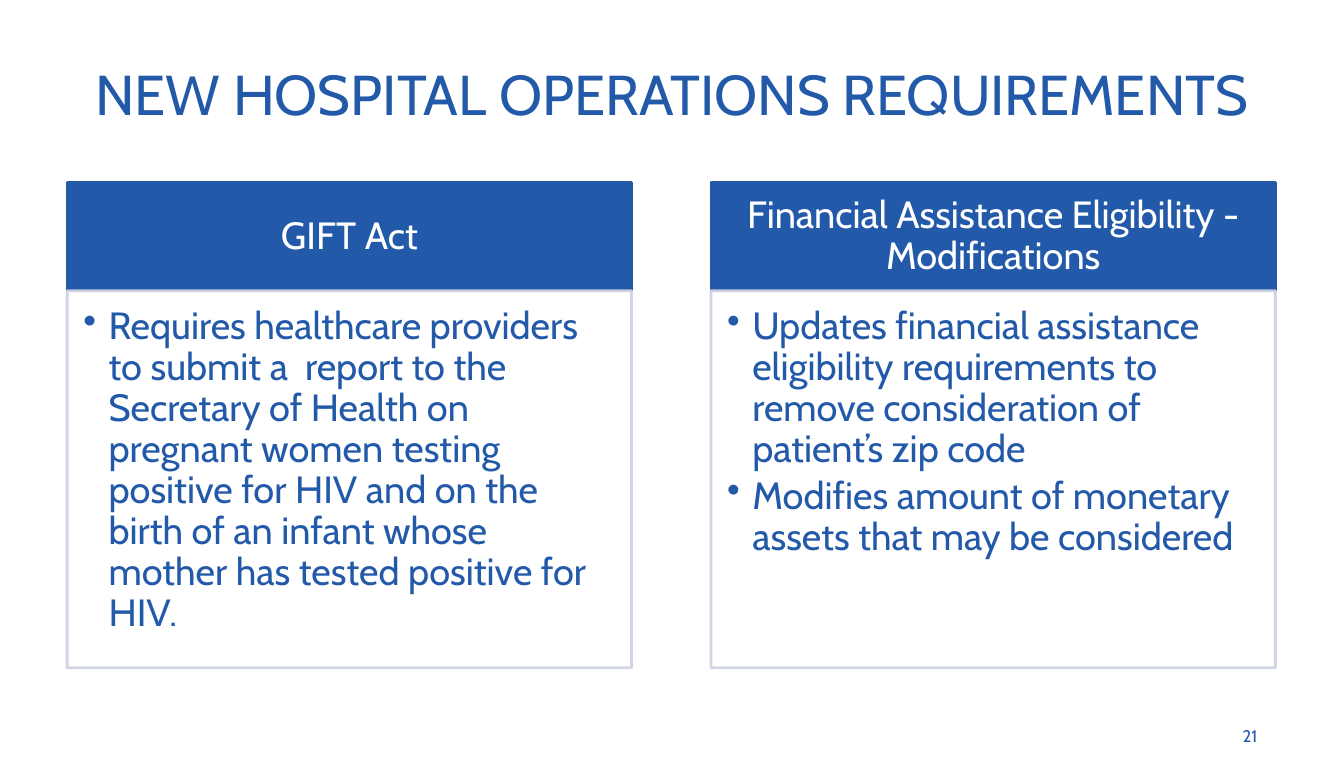
import pptx
import pptx.util
import pptx.dml.color
import pptx.enum.shapes
import pptx.enum.text
import pptx.oxml.ns
import lxml.etree

Inches, Pt = pptx.util.Inches, pptx.util.Pt
ALIGN = pptx.enum.text.PP_ALIGN
ANCHOR = pptx.enum.text.MSO_ANCHOR
qn = pptx.oxml.ns.qn


def color(code):
    return pptx.dml.color.RGBColor.from_string(code)


class Deck:
    font, blue, pale, white = "Cabin", "2359A9", "CDD1E2", "FFFFFF"

    def __init__(self, width, height):
        self.prs = pptx.Presentation()
        self.prs.slide_width = Inches(width)
        self.prs.slide_height = Inches(height)
        self.slide = self.prs.slides.add_slide(self.prs.slide_layouts[6])

    def place(self, left, top, width, height):
        """Turn percent of the slide's size into lengths."""
        wide, high = self.prs.slide_width / 100, self.prs.slide_height / 100
        return [int(v) for v in (left * wide, top * high, width * wide, height * high)]

    def fill_text(self, shape, lines, size, ink, align, anchor, inset=(0.1, 0.05, 0.1, 0.05),
                  space=1.0, after=0, bullet=False):
        frame = shape.text_frame
        frame.word_wrap = True
        frame.vertical_anchor = anchor
        (frame.margin_left, frame.margin_top,
         frame.margin_right, frame.margin_bottom) = map(Inches, inset)
        frame.text = "\n".join(lines)
        for para in frame.paragraphs:
            para.alignment, para.line_spacing = align, space
            para.space_after = Pt(after)
            if bullet:
                props = para._p.get_or_add_pPr()
                props.set("marL", str(Inches(0.25)))
                props.set("indent", str(Inches(-0.25)))
                lxml.etree.SubElement(props, qn("a:buChar")).set("char", "•")
            para.font.name, para.font.size = self.font, Pt(size)
            para.font.color.rgb = color(ink)

    def label(self, box, text, size, align):
        shape = self.slide.shapes.add_textbox(*self.place(*box))
        self.fill_text(shape, [text], size, self.blue, align, ANCHOR.MIDDLE)

    def panel(self, box, fill, edge, alpha=100):
        shape = self.slide.shapes.add_shape(
            pptx.enum.shapes.MSO_SHAPE.RECTANGLE, *self.place(*box))
        shape.shadow.inherit = False
        shape.fill.solid()
        shape.fill.fore_color.rgb = color(fill)
        shape.line.color.rgb = color(edge)
        shape.line.width = Pt(2)
        if alpha < 100:
            for tint in shape._element.spPr.iter(qn("a:srgbClr")):
                lxml.etree.SubElement(tint, qn("a:alpha")).set("val", str(alpha * 1000))
        return shape

    def card(self, left, head, points):
        top, width, high, deep = 24.1, 42, 14.25, 49.75
        shape = self.panel((left, top, width, high), self.blue, self.blue)
        self.fill_text(shape, [head], 27, self.white, ALIGN.CENTER, ANCHOR.MIDDLE,
                       (0.21, 0.12, 0.21, 0.12), 0.9)
        shape = self.panel((left, top + high, width, deep), self.white, self.pale, 90)
        self.fill_text(shape, points, 27, self.blue, ALIGN.LEFT, ANCHOR.TOP,
                       (0.16, 0.16, 0.21, 0.24), 0.9, 4, True)


def main():
    deck = Deck(13.3, 7.5)

    # Title
    deck.label((5, 4, 90, 16.67), "NEW HOSPITAL OPERATIONS REQUIREMENTS", 40, ALIGN.CENTER)

    # Cards
    cards = [
        ("GIFT Act", [
            "Requires healthcare providers to submit a  report to the Secretary of Health "
            "on pregnant women testing positive for HIV and on the birth of an infant "
            "whose mother has tested positive for HIV."]),
        ("Financial Assistance Eligibility - Modifications", [
            "Updates financial assistance eligibility requirements to remove "
            "consideration of patient’s zip code",
            "Modifies amount of monetary assets that may be considered"]),
    ]
    for i, (head, points) in enumerate(cards):
        deck.card(5 + i * 47.9, head, points)

    # Page number
    deck.label((89.3, 94.4, 5, 5.3), "21", 12, ALIGN.RIGHT)

    deck.prs.save("out.pptx")


if __name__ == "__main__":
    main()
